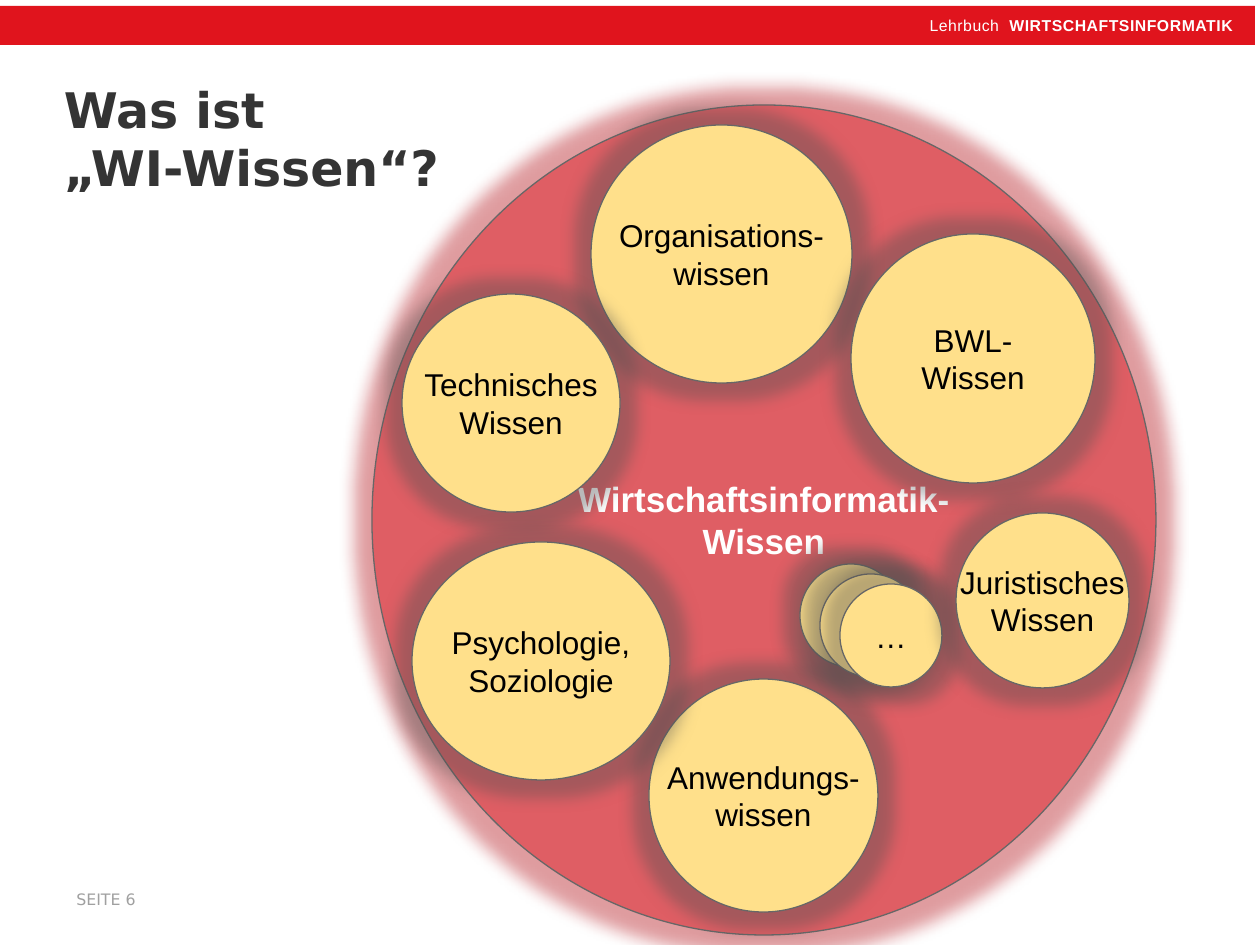
"""Build a slide showing the fields of knowledge inside business informatics."""
import pptx
import pptx.util
import pptx.dml.color
import pptx.enum.shapes
import pptx.enum.text
import pptx.oxml
import pptx.oxml.ns

RGB = pptx.dml.color.RGBColor
RED = RGB(0xE0, 0x14, 0x1D)
WINE = RGB(0xB0, 0x08, 0x10)
SAND = RGB(0xFF, 0xE0, 0x8B)
GREY = RGB(0x67, 0x67, 0x67)
DARK = RGB(0x50, 0x50, 0x50)
TITLE = RGB(0x34, 0x34, 0x34)
PALE = RGB(0xA0, 0xA0, 0xA0)
BLACK = RGB(0, 0, 0)
WHITE = RGB(255, 255, 255)
NS = pptx.oxml.ns.nsdecls("a")
QN = pptx.oxml.ns.qn
ALIGN = pptx.enum.text.PP_ALIGN
KIND = pptx.enum.shapes.MSO_SHAPE
EMU = 914400 / 126

FIELDS = [
    ("Anwendungs-\nwissen", 649, 679, 229, 233),
    ("Organisations-\nwissen", 591, 125, 261, 258),
    ("Technisches\nWissen", 402, 294, 218, 218),
    ("Psychologie,\nSoziologie", 412, 542, 258, 238),
    *[("…", 800 + 20 * i, 564 + 10 * i, 102, 103) for i in range(3)],
    ("BWL-\nWissen", 851, 234, 244, 249),
    ("Juristisches\nWissen", 956, 513, 173, 175),
]


def px(*nums):
    """Turn pixels into EMU."""
    return [pptx.util.Emu(round(n * EMU)) for n in nums]


def style(font, size, color, bold=False, name="Arial"):
    """Format a font."""
    font.size, font.bold, font.name = pptx.util.Pt(size), bold, name
    font.color.rgb = color


def write(frame, text, size, color, bold=False, name="Arial", align=ALIGN.LEFT):
    """Put one formatted paragraph into a frame, centred in height."""
    frame.vertical_anchor = pptx.enum.text.MSO_ANCHOR.MIDDLE
    para = frame.paragraphs[0]
    para.text = text
    para.alignment = align
    style(para.font, size, color, bold, name)


def shape(slide, kind, box, fill):
    """Add a filled preset shape with no shadow."""
    item = slide.shapes.add_shape(kind, *px(*box))
    item.fill.solid()
    item.fill.fore_color.rgb = fill
    item.shadow.inherit = False
    return item


def fade(node, percent):
    """Give a colour element an opacity."""
    node.append(pptx.oxml.parse_xml(f'<a:alpha {NS} val="{percent * 1000}"/>'))


def circle(slide, text, box, fill, halo, size, color, bold=False):
    """Add a labelled ellipse with a soft halo."""
    item = shape(slide, KIND.OVAL, box, fill)
    item.line.color.rgb = GREY
    item.line.width = pptx.util.Pt(0.75)
    glow = pptx.oxml.parse_xml(
        f'<a:glow {NS} rad="228600"><a:srgbClr val="{halo}"/></a:glow>')
    fade(glow[0], 40)
    item._element.spPr.find(QN("a:effectLst")).append(glow)
    item.text_frame.word_wrap = False
    write(item.text_frame, text, size, color, bold, align=ALIGN.CENTER)
    return item


def banner(slide):
    """Add the red bar with the book's name."""
    bar = shape(slide, KIND.RECTANGLE, (0, 6, 1255, 39), RED)
    bar.line.fill.background()
    frame = slide.shapes.add_textbox(*px(779, 10, 466, 32)).text_frame
    frame.word_wrap = True
    para = frame.paragraphs[0]
    para.alignment = ALIGN.RIGHT
    for text, bold in (("Lehrbuch  ", False), ("WIRTSCHAFTSINFORMATIK", True)):
        run = para.add_run()
        run.text = text
        style(run.font, 9, WHITE, bold)
        run.font._element.set("spc", "30")


def head(slide):
    """Place and format the title."""
    title = slide.shapes.title
    title.left, title.top, title.width, title.height = px(64, 59, 864, 158)
    frame = title.text_frame
    frame.margin_left = frame.margin_right = 0
    frame.margin_top = frame.margin_bottom = 0
    write(frame, "Was ist \n„WI-Wissen“?", 28, TITLE, True, "DejaVu Sans")


def main():
    """Build and save the slide."""
    deck = pptx.Presentation()
    deck.slide_width, deck.slide_height = px(1260, 945)
    slide = deck.slides.add_slide(deck.slide_layouts[5])
    banner(slide)
    head(slide)
    whole = circle(slide, "Wirtschaftsinformatik-\nWissen",
                   (372, 105, 784, 830), RED, WINE, 20, WHITE, True)
    fade(whole._element.spPr.find(QN("a:solidFill"))[0], 45)
    for text, *box in FIELDS:
        circle(slide, text, box, SAND, DARK, 18, BLACK)
    page = slide.shapes.add_textbox(*px(64, 874, 444, 50)).text_frame
    page.word_wrap = True
    write(page, "SEITE 6", 9, PALE, name="DejaVu Sans")
    deck.save("out.pptx")


if __name__ == "__main__":
    main()
